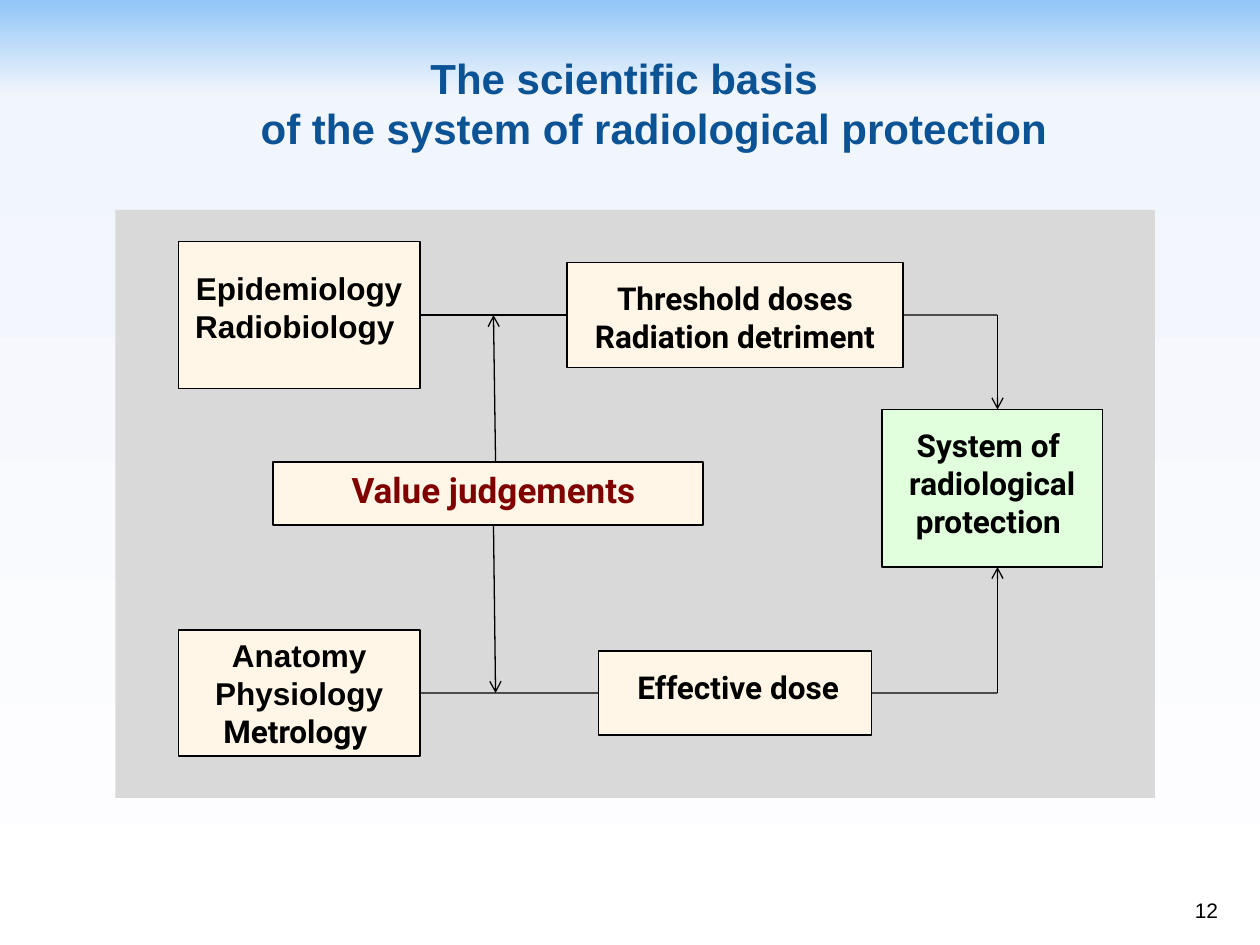
from copy import deepcopy
from dataclasses import dataclass

from lxml.etree import SubElement
from pptx import Presentation
from pptx.dml.color import RGBColor
from pptx.enum.shapes import MSO_CONNECTOR, MSO_SHAPE
from pptx.enum.text import MSO_ANCHOR, MSO_AUTO_SIZE, PP_ALIGN
from pptx.oxml.ns import qn
from pptx.util import Inches, Pt

CELL = 1 / 12  # grid of 120 columns and 90 rows
COLORS = {
    "title": "0B5394", "text": "000000", "accent": "800000", "line": "000000",
    "panel": "D9D9D9", "cream": "FFF6E7", "green": "E2FFDD",
}
BACKGROUND = [(0, "91C6F7"), (0.1, "F1F5FC"), (1, "FFFFFF")]


@dataclass
class Label:
    area: tuple  # column, row, columns, rows
    lines: list
    fonts: list
    size: int = 18
    color: str = "text"
    bold: bool = True
    align: PP_ALIGN = PP_ALIGN.CENTER
    anchor: MSO_ANCHOR = MSO_ANCHOR.TOP


@dataclass
class Node:
    area: tuple
    fill: str
    label: Label


@dataclass
class Link:
    start: tuple
    end: tuple
    arrow: bool = False
    begin_node: str = ""
    end_node: str = ""


ARIAL, ROBOTO = ["Arial"], ["Roboto"]
NODES = {
    "judgements": Node((26, 44, 41, 6), "cream", Label(
        (28, 44, 38, 5.3), ["Value judgements"], ROBOTO, 20, "accent")),
    "detriment": Node((54, 25, 32, 10), "cream", Label(
        (54, 26, 32, 8.5), ["Threshold doses", "Radiation detriment"], ROBOTO * 2)),
    "dose": Node((57, 62, 26, 8), "cream", Label(
        (58, 63, 24.6, 4.8), ["Effective dose"], ROBOTO)),
    "system": Node((84, 39, 21, 15), "green", Label(
        (84, 40, 21, 12), ["System of ", "radiological", "protection "], ROBOTO * 3)),
    "anatomy": Node((17, 60, 23, 12), "cream", Label(
        (18, 60, 21, 12), ["Anatomy", "Physiology", "Metrology "], ARIAL * 2 + ROBOTO)),
    "biology": Node((17, 23, 23, 14), "cream", Label(
        (17, 25, 23, 8.5), ["Epidemiology", "Radiobiology "], ARIAL * 2)),
}
LINKS = [
    Link((40, 30), (54, 30), begin_node="biology", end_node="detriment"),
    Link((40, 66), (57, 66), begin_node="anatomy", end_node="dose"),
    Link((86, 30), (95, 30), begin_node="detriment"),
    Link((83, 66), (95, 66), begin_node="dose"),
    Link((95, 30), (95, 39), arrow=True),
    Link((95, 66), (95, 54), arrow=True),
    Link((47.2, 44), (47, 30), arrow=True),
    Link((47, 50), (47.2, 66), arrow=True),
]
TITLE = Label((0, 4, 120, 11), ["The scientific basis \vof the system of radiological protection"],
              ARIAL, 24, "title", anchor=MSO_ANCHOR.MIDDLE)
NUMBER = Label((92.2, 82.5, 25, 6), ["12"], ARIAL, 12, bold=False,
               align=PP_ALIGN.RIGHT, anchor=MSO_ANCHOR.BOTTOM)


def grid(values: tuple) -> list:
    return [Inches(value * CELL) for value in values]


def color(name: str) -> RGBColor:
    return RGBColor.from_string(COLORS[name])


def paint_background(page) -> None:
    fill = page.background.fill
    fill.gradient()
    fill.gradient_angle = 270
    stops = page._element.find(".//" + qn("a:gsLst"))
    stops.append(deepcopy(stops[0]))
    for stop, (position, value) in zip(fill.gradient_stops, BACKGROUND):
        stop.position = position
        stop.color.rgb = RGBColor.from_string(value)


def add_box(page, area: tuple, fill: str, outlined: bool = True):
    box = page.shapes.add_shape(MSO_SHAPE.RECTANGLE, *grid(area))
    box.shadow.inherit = False
    box.fill.solid()
    box.fill.fore_color.rgb = color(fill)
    if outlined:
        box.line.color.rgb = color("line")
        box.line.width = Pt(1)
    else:
        box.line.fill.background()
    return box


def add_label(page, label: Label):
    box = page.shapes.add_textbox(*grid(label.area))
    frame = box.text_frame
    frame_format = {"word_wrap": True, "auto_size": MSO_AUTO_SIZE.NONE,
                    "vertical_anchor": label.anchor}
    for name, value in frame_format.items():
        setattr(frame, name, value)
    for index, (line, font) in enumerate(zip(label.lines, label.fonts)):
        para = frame.add_paragraph() if index else frame.paragraphs[0]
        para.text = line
        para.alignment = label.align
        font_format = {"name": font, "size": Pt(label.size), "bold": label.bold}
        for span in para.runs:
            for name, value in font_format.items():
                setattr(span.font, name, value)
            span.font.color.rgb = color(label.color)
    return box


def add_link(page, link: Link, boxes: dict) -> None:
    line = page.shapes.add_connector(MSO_CONNECTOR.STRAIGHT, *grid(link.start + link.end))
    if link.begin_node:
        line.begin_connect(boxes[link.begin_node], 3)
    if link.end_node:
        line.end_connect(boxes[link.end_node], 1)
    line.line.color.rgb = color("line")
    line.line.width = Pt(0.75)
    if link.arrow:
        SubElement(line.line._get_or_add_ln(), qn("a:tailEnd"), type="arrow")
    SubElement(line._element.spPr, qn("a:effectLst"))


def add_title(page) -> None:
    frame = add_label(page, TITLE).text_frame
    for side in ("margin_left", "margin_right", "margin_bottom"):
        setattr(frame, side, 0)
    # Hanging indent
    properties = frame.paragraphs[0]._p.get_or_add_pPr()
    properties.set("marL", str(Inches(0.38)))
    properties.set("indent", str(-Inches(0.38)))


def main() -> None:
    deck = Presentation()
    deck.slide_width, deck.slide_height = grid((120, 90))
    page = deck.slides.add_slide(deck.slide_layouts[6])
    paint_background(page)
    add_title(page)
    add_label(page, NUMBER)

    # Diagram: panel, boxes, links, then wording
    add_box(page, (11, 20, 99, 56), "panel", outlined=False)
    boxes = {name: add_box(page, node.area, node.fill) for name, node in NODES.items()}
    for link in LINKS:
        add_link(page, link, boxes)
    for node in NODES.values():
        add_label(page, node.label)
    deck.save("out.pptx")


if __name__ == "__main__":
    main()
